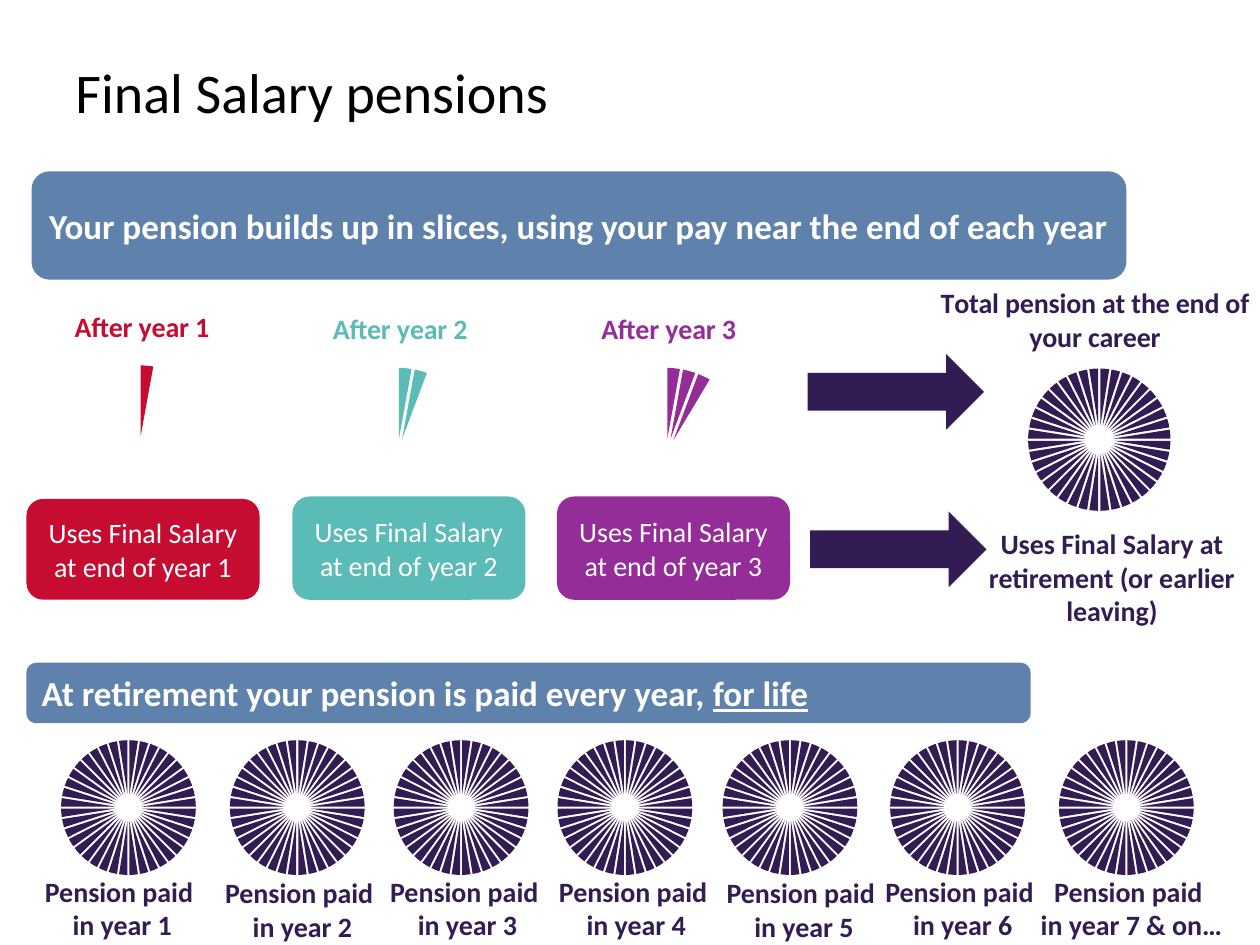
import pptx
import pptx.chart.data
import pptx.dml.color
import pptx.enum.chart
import pptx.enum.shapes
import pptx.enum.text
import pptx.oxml
import pptx.oxml.ns
import pptx.util
from pptx.util import Inches

COLORS = {
    "white": "FFFFFF",
    "black": "000000",
    "blue": "5E82AB",
    "navy": "331C54",
    "red": "C60C30",
    "teal": "5BBBB7",
    "purple": "952D98",
}
FONT = "Calibri"
SHAPES = pptx.enum.shapes.MSO_SHAPE
ANCHOR = pptx.enum.text.MSO_ANCHOR
ALIGN = pptx.enum.text.PP_ALIGN
NS = pptx.oxml.ns.nsdecls("c")


def rgb(name):
    return pptx.dml.color.RGBColor.from_string(COLORS[name])


def add_run(p, text, size=16, color="white", bold=False, underline=None):
    r = p.add_run()
    r.text = text
    r.font.name = FONT
    r.font.size = pptx.util.Pt(size)
    r.font.color.rgb = rgb(color)
    r.font.bold = bold
    r.font.underline = underline


def set_layout(parent, index, **values):
    old = parent.find(pptx.oxml.ns.qn("c:layout"))
    if old is not None:
        parent.remove(old)
    items = "".join(f'<c:{tag} val="{val}"/>' for tag, val in values.items())
    parent.insert(index, pptx.oxml.parse_xml(
        f"<c:layout {NS}><c:manualLayout>{items}</c:manualLayout></c:layout>"))


class SlideBuilder:
    def __init__(self, s):
        self.s = s

    def fill_text(self, sp, lines, align=ALIGN.CENTER, anchor=ANCHOR.MIDDLE, **style):
        tf = sp.text_frame
        tf.word_wrap = True
        tf.vertical_anchor = anchor
        p = tf.paragraphs[0]
        p.alignment = align
        for i, line in enumerate(lines):
            if i:
                p.add_line_break()
            add_run(p, line, **style)
        return p

    def text(self, box, *lines, **style):
        sp = self.s.shapes.add_textbox(*map(Inches, box))
        self.fill_text(sp, lines, **style)
        return sp

    def shape(self, kind, box, color):
        sp = self.s.shapes.add_shape(kind, *map(Inches, box))
        sp.shadow.inherit = False
        sp.fill.solid()
        sp.fill.fore_color.rgb = rgb(color)
        sp.line.fill.background()
        return sp

    def panel(self, box, color, text, **style):
        sp = self.shape(SHAPES.ROUNDED_RECTANGLE, box, color)
        return sp, self.fill_text(sp, [text], **style)

    def arrow(self, left, top):
        self.shape(SHAPES.RIGHT_ARROW, (left, top, 1.4, 0.6), "navy")

    def pie(self, box, slices, filled, color, diameter, center, title=None, title_at=None):
        data = pptx.chart.data.CategoryChartData()
        data.categories = [str(n + 1) for n in range(slices)]
        data.add_series("Series 1", [2 if slices == 40 else 3] * slices)
        kind = pptx.enum.chart.XL_CHART_TYPE.PIE
        chart = self.s.shapes.add_chart(kind, *map(Inches, box), data).chart
        chart.has_legend = False
        chart.font.name = FONT
        chart.font.size = pptx.util.Pt(10)
        chart.font.color.rgb = rgb("black")
        plot = chart.plots[0]
        plot.vary_by_categories = False
        series = plot.series[0]
        series.format.line.fill.background()
        for n in range(slices):
            fmt = series.points[n].format
            fmt.fill.solid()
            fmt.fill.fore_color.rgb = rgb(color if n < filled else "white")
            fmt.line.fill.background()
        explosion = pptx.oxml.parse_xml(f'<c:explosion {NS} val="25"/>')
        series._element.find(pptx.oxml.ns.qn("c:spPr")).addnext(explosion)
        chart.has_title = title is not None
        if title:
            add_run(chart.chart_title.text_frame.paragraphs[0], title, color=color, bold=True)
            x, y = title_at
            set_layout(chart.chart_title._element, 1, xMode="edge", yMode="edge", x=x, y=y)
        width, height = box[2:]
        set_layout(chart._chartSpace.chart.plotArea, 0,
                   layoutTarget="inner", xMode="edge", yMode="edge",
                   x=0.5 - diameter / width / 2, y=(center - diameter / 2) / height,
                   w=diameter / width, h=diameter / height)


def main():
    prs = pptx.Presentation()
    prs.slide_width, prs.slide_height = Inches(10), Inches(7.5)
    b = SlideBuilder(prs.slides.add_slide(prs.slide_layouts[6]))

    title = b.text((0.5, 0.3, 9, 1.25), "Final Salary pensions", size=32,
                   color="black", align=ALIGN.LEFT, anchor=ANCHOR.TOP)
    title.text_frame.margin_top = Inches(0.16)

    b.pie((7.1, 2.04, 3.25, 2.17), 40, 40, "navy", 1.13, 1.45,
          "Total pension at the end of your career", (0.1, 0.08))
    heading = {"size": 20, "bold": True, "align": ALIGN.LEFT}
    banner, p = b.panel(
        (0.25, 1.36, 8.69, 0.86), "blue",
        "Your pension builds up in slices, using your pay near the end of each year", **heading)
    banner.text_frame.margin_right = Inches(0.05)
    b.arrow(6.41, 2.81)

    years = [
        (1, "red", -0.52, 2.25, (0.21, 3.96, 1.85, 0.8)),
        (2, "teal", 1.53, 2.27, (2.32, 3.94, 1.85, 0.82)),
        (3, "purple", 3.66, 2.27, (4.42, 3.94, 1.85, 0.82)),
    ]
    for year, color, left, top, box in years[1:] + years[:1]:
        b.pie((left, top, 3.25, 2.17), 35, year, color, 1.4, 1.35,
              f"After year {year}", (0.33, 0.07))
    for year, color, left, top, box in years:
        b.panel(box, color, f"Uses Final Salary at end of year {year}")

    banner, p = b.panel((0.21, 5.26, 7.97, 0.48), "blue",
                        "At retirement your pension is paid every year, ", **heading)
    add_run(p, "for life", size=20, bold=True, underline=True)

    pie_lefts = [-0.01, 1.33, 2.63, 3.93, 5.24, 6.57, 7.91]
    label_lefts = [-0.02, 1.41, 2.72, 4.06, 5.39, 6.65, 7.99]
    for left in pie_lefts:
        b.pie((left, 5.72, 2.06, 1.37), 40, 40, "navy", 1.07, 0.69)
    for year, left in enumerate(label_lefts, 1):
        top = 7.06 if year in (2, 5) else 7.05
        suffix = " & on…" if year == len(label_lefts) else ""
        b.text((left, top, 1.98, 0.31), "Pension paid ", f"in year {year}{suffix}",
               color="navy", bold=True)

    b.text((7.68, 4.17, 2.29, 0.82), "Uses Final Salary at retirement (or earlier leaving)",
           color="navy", bold=True)
    b.arrow(6.43, 4.06)
    prs.save("out.pptx")


if __name__ == "__main__":
    main()
